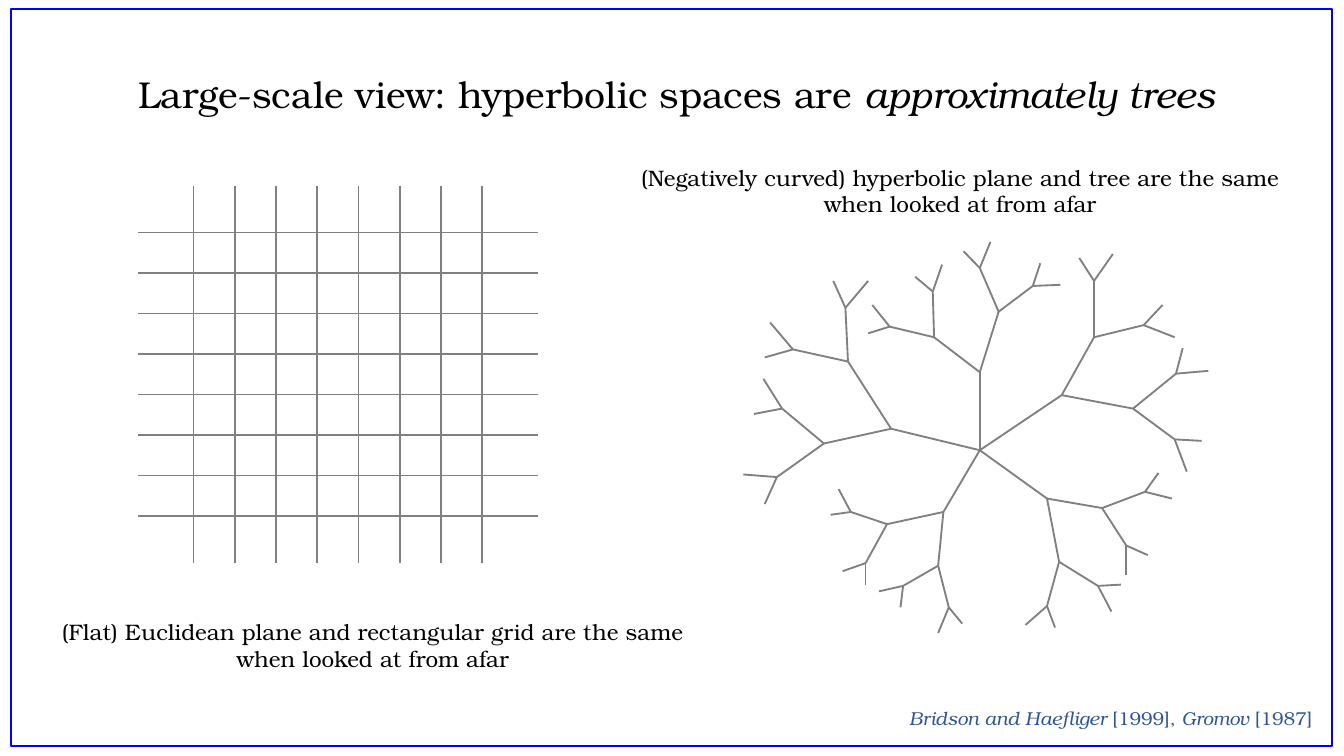
from dataclasses import dataclass

from pptx import Presentation
from pptx.dml.color import RGBColor
from pptx.enum.shapes import MSO_CONNECTOR, MSO_SHAPE
from pptx.enum.text import MSO_ANCHOR, MSO_AUTO_SIZE, PP_ALIGN
from pptx.oxml.ns import qn
from pptx.shapes.group import GroupShape
from pptx.text.text import TextFrame
from pptx.util import Pt
from lxml.etree import SubElement

BLACK = RGBColor(0x00, 0x00, 0x00)
BLUE = RGBColor(0x00, 0x00, 0xFF)
NAVY = RGBColor(0x2F, 0x55, 0x97)
GRAY = RGBColor(0x80, 0x80, 0x80)
FONT = "TeX Gyre Bonum"

Point = tuple[float, float]


@dataclass
class Run:
    text: str
    slant: bool = False


@dataclass
class Label:
    box: tuple[float, float, float, float]
    lines: list[list[Run]]
    size: int
    color: RGBColor = BLACK


TITLE = Label((8.8, 34.6, 707.8, 31.7), [[
    Run("Large-scale view: hyperbolic spaces are "),
    Run("approximately trees", True)]], 20)

LABELS = [
    Label((24.5, 327.6, 350.6, 36), [
        [Run("(Flat) Euclidean plane and rectangular grid are the same")],
        [Run("when looked at from afar")]], 12),
    Label((334.1, 84.2, 360.7, 36), [
        [Run("(Negatively curved) hyperbolic plane and tree are the same")],
        [Run("when looked at from afar")]], 12),
    Label((476.6, 375.1, 236.9, 19.4), [[
        Run("Bridson and Haefliger", True), Run(" [1999], "),
        Run("Gromov", True), Run(" [1987]")]], 10, NAVY),
]

# Each limb is a binary tree listed level by level: 1, 2, 4 and 8 nodes
ROOT = (524.9, 241.2)
LIMBS: list[list[Point]] = [
    # Top
    [(524.9, 199.4),
     (500.4, 180.7), (535, 167),
     (499.7, 156.2), (476.6, 175), (553.3, 153.2), (524.9, 143.6),
     (504.7, 141.8), (490.3, 148.3), (467.3, 163.4), (465.1, 178.6),
     (568.1, 152.6), (557.3, 141.1), (530.6, 129.6), (516.2, 134.6)],
    # Lower left
    [(505.4, 274.3),
     (475.2, 280.8), (502.6, 303.1),
     (455.8, 274.3), (463.7, 301.7), (483.8, 313.9), (508.3, 325.4),
     (449.3, 262.1), (445, 275.8), (451.4, 306), (463.7, 313.2),
     (470.9, 316.8), (482.4, 325.4), (502.6, 339.1), (515.5, 334.1)],
    # Lower right
    [(560.9, 267.1),
     (567.4, 301), (590.4, 272.2),
     (560.9, 324.7), (588.2, 313.9), (603.4, 292.3), (613.4, 263.5),
     (549.4, 334.8), (565.2, 336.2), (595.4, 327.6), (600.5, 313.2),
     (603.4, 308.2), (614.9, 297.4), (627.8, 267.1), (620.6, 253.4)],
    # Upper right
    [(568.8, 211.7),
     (607, 218.9), (586.1, 180.7),
     (629.3, 235.4), (630, 200.2), (612.7, 174.2), (586.1, 150.5),
     (635.8, 252.7), (643.7, 236.2), (647.3, 198.7), (633.6, 186.5),
     (629.3, 180.7), (622.8, 163.4), (596.2, 136.1), (578.2, 138.2)],
    # Upper left
    [(477.4, 229.7),
     (454.3, 193.7), (441.4, 237.6),
     (452.9, 164.9), (424.8, 187.2), (419, 218.9), (416.2, 255.6),
     (465.1, 150.5), (446.4, 150.5), (412.6, 172.8), (409.7, 191.5),
     (409, 203), (403.9, 221.8), (398.2, 254.2), (409.7, 270)],
]


def draw_line(group: GroupShape, start: Point, end: Point) -> None:
    ends = [Pt(v) for v in (*start, *end)]
    line = group.shapes.add_connector(MSO_CONNECTOR.STRAIGHT, *ends)
    line.line.color.rgb = GRAY
    line.line.width = Pt(1)
    SubElement(line._element.spPr, qn("a:effectLst"))


def draw_grid(group: GroupShape, count: int = 8) -> None:
    left, right, top, base = 74.2, 288, 99.4, 301.7
    for i in range(count):
        y = 124.6 + 21.7 * i
        draw_line(group, (left, y), (right, y))
        x = 103.7 + 22.1 * i
        draw_line(group, (x, top), (x, base))


def draw_limb(group: GroupShape, nodes: list[Point]) -> None:
    draw_line(group, ROOT, nodes[0])
    for i in range(1, len(nodes)):
        draw_line(group, nodes[(i - 1) // 2], nodes[i])


def write(frame: TextFrame, label: Label, wrap: bool) -> None:
    form = {"word_wrap": wrap, "auto_size": MSO_AUTO_SIZE.NONE,
            "vertical_anchor": MSO_ANCHOR.TOP}
    for key, value in form.items():
        setattr(frame, key, value)
    for i, line in enumerate(label.lines):
        para = frame.add_paragraph() if i else frame.paragraphs[0]
        para.alignment = PP_ALIGN.CENTER
        for part in line:
            run = para.add_run()
            run.text = part.text
            style = {"name": FONT, "size": Pt(label.size),
                     "italic": part.slant}
            for key, value in style.items():
                setattr(run.font, key, value)
            run.font.color.rgb = label.color


def main() -> None:
    deck = Presentation()
    deck.slide_width, deck.slide_height = Pt(720), Pt(405)
    slide = deck.slides.add_slide(deck.slide_layouts[5])
    shapes = slide.shapes

    # Border
    frame = shapes.add_shape(MSO_SHAPE.RECTANGLE,
                             Pt(5.8), Pt(5), Pt(707.8), Pt(394.6))
    frame.shadow.inherit = False
    frame.fill.background()
    frame.line.color.rgb = BLUE
    frame.line.width = Pt(1)

    # Title
    title = shapes.title
    for key, value in zip(("left", "top", "width", "height"), TITLE.box):
        setattr(title, key, Pt(value))
    write(title.text_frame, TITLE, True)

    # Grid and tree
    draw_grid(shapes.add_group_shape())
    tree = shapes.add_group_shape()
    for limb in LIMBS:
        draw_limb(tree, limb)

    # Captions and sources
    for label in LABELS:
        box = shapes.add_textbox(*(Pt(v) for v in label.box))
        write(box.text_frame, label, False)

    deck.save("out.pptx")


if __name__ == "__main__":
    main()
